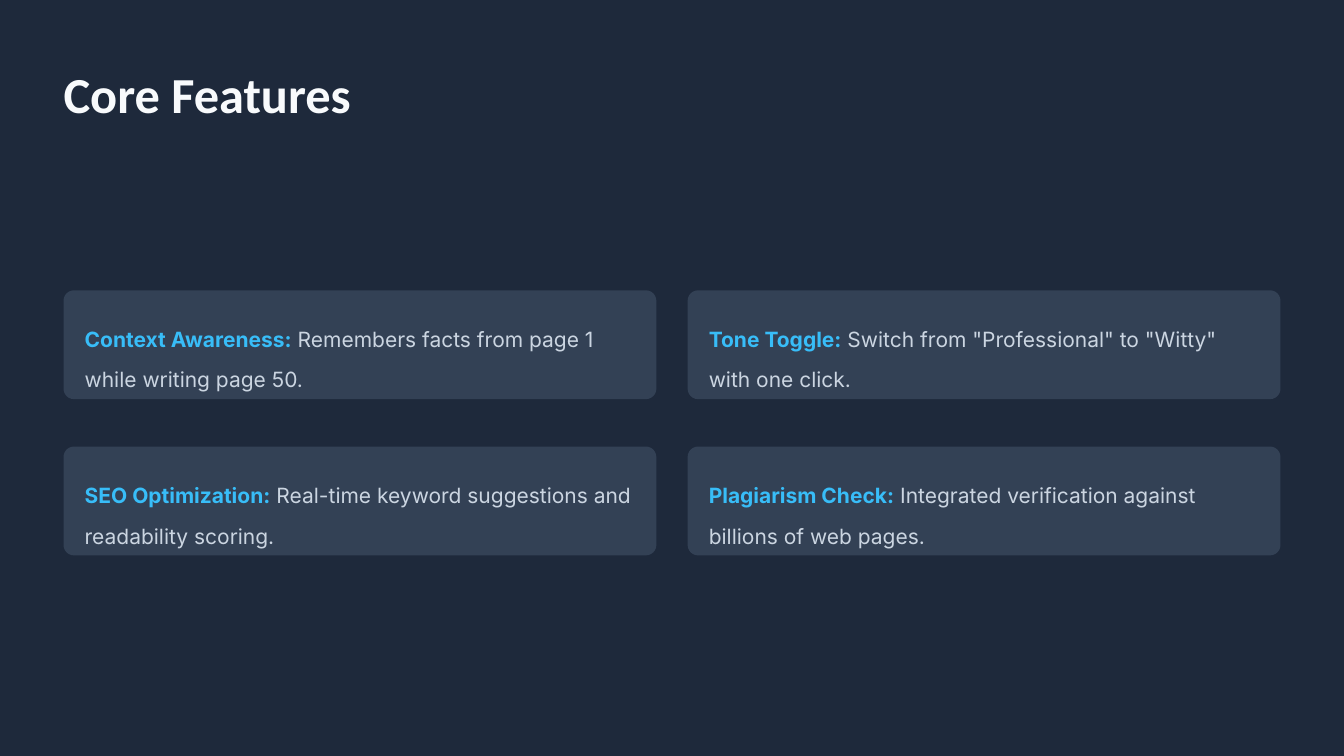
from pptx import Presentation
from pptx.dml.color import RGBColor
from pptx.enum.shapes import MSO_SHAPE
from pptx.enum.text import MSO_AUTO_SIZE
from pptx.util import Inches, Pt

BACKGROUND, CARD = "1E293B", "334155"
TITLE = dict(size=Pt(36), name="Calibri", bold=True)
LABEL = dict(size=Pt(15), name="Inter", bold=True)
DETAIL = dict(size=Pt(15), name="Inter", bold=False)

FEATURES = [
    ("Context Awareness:", " Remembers facts from page 1 while writing page 50."),
    ("Tone Toggle:", ' Switch from "Professional" to "Witty" with one click.'),
    ("SEO Optimization:", " Real-time keyword suggestions and readability scoring."),
    ("Plagiarism Check:", " Integrated verification against billions of web pages."),
]


def rgb(color):
    return RGBColor.from_string(color)


def add_text(slide, left, top, width, height, runs, line_spacing=1.0):
    """Place one paragraph made of (text, colour, font values) runs."""
    box = slide.shapes.add_textbox(*map(Inches, (left, top, width, height)))
    tf = box.text_frame
    frame = dict(word_wrap=True, auto_size=MSO_AUTO_SIZE.SHAPE_TO_FIT_TEXT,
                 margin_left=0, margin_top=0, margin_right=0, margin_bottom=0)
    for key, value in frame.items():
        setattr(tf, key, value)
    p = tf.paragraphs[0]
    p.line_spacing = line_spacing
    for text, color, font in runs:
        r = p.add_run()
        r.text = text
        r.font.color.rgb = rgb(color)
        for key, value in font.items():
            setattr(r.font, key, value)


def add_title(slide, left, top, width, height):
    add_text(slide, left, top, width, height,
             [("Core Features", "F8FAFC", TITLE)])


def add_card(slide, left, top, width, height, label, detail):
    sp = slide.shapes.add_shape(MSO_SHAPE.ROUNDED_RECTANGLE,
                                *map(Inches, (left, top, width, height)))
    sp.adjustments[0] = 0.096
    sp.shadow.inherit = False
    sp.fill.solid()
    sp.fill.fore_color.rgb = rgb(CARD)
    sp.line.fill.background()
    pad = 0.21
    add_text(slide, left + pad, top + pad, width - 2 * pad + 0.01, 0.8,
             [(label, "38BDF8", LABEL), (detail, "CBD5E1", DETAIL)], 1.6)


def add_feature_grid(slide, left, top, width, height, columns=2):
    """Lay the feature cards out row by row within the box."""
    card_w, card_h = 5.88, 1.08
    rows = len(FEATURES) // columns
    step_x = (width - card_w) / (columns - 1)
    step_y = (height - card_h) / (rows - 1)
    for i, (label, detail) in enumerate(FEATURES):
        row, column = divmod(i, columns)
        add_card(slide, left + column * step_x, top + row * step_y,
                 card_w, card_h, label, detail)


def main():
    prs = Presentation()
    prs.slide_width, prs.slide_height = Inches(13.33), Inches(7.5)
    slide = prs.slides.add_slide(prs.slide_layouts[6])
    slide.background.fill.solid()
    slide.background.fill.fore_color.rgb = rgb(BACKGROUND)
    add_title(slide, 0.63, 0.63, 12.69, 0.6)
    add_feature_grid(slide, 0.63, 2.88, 12.07, 2.63)
    prs.save("out.pptx")


if __name__ == "__main__":
    main()
